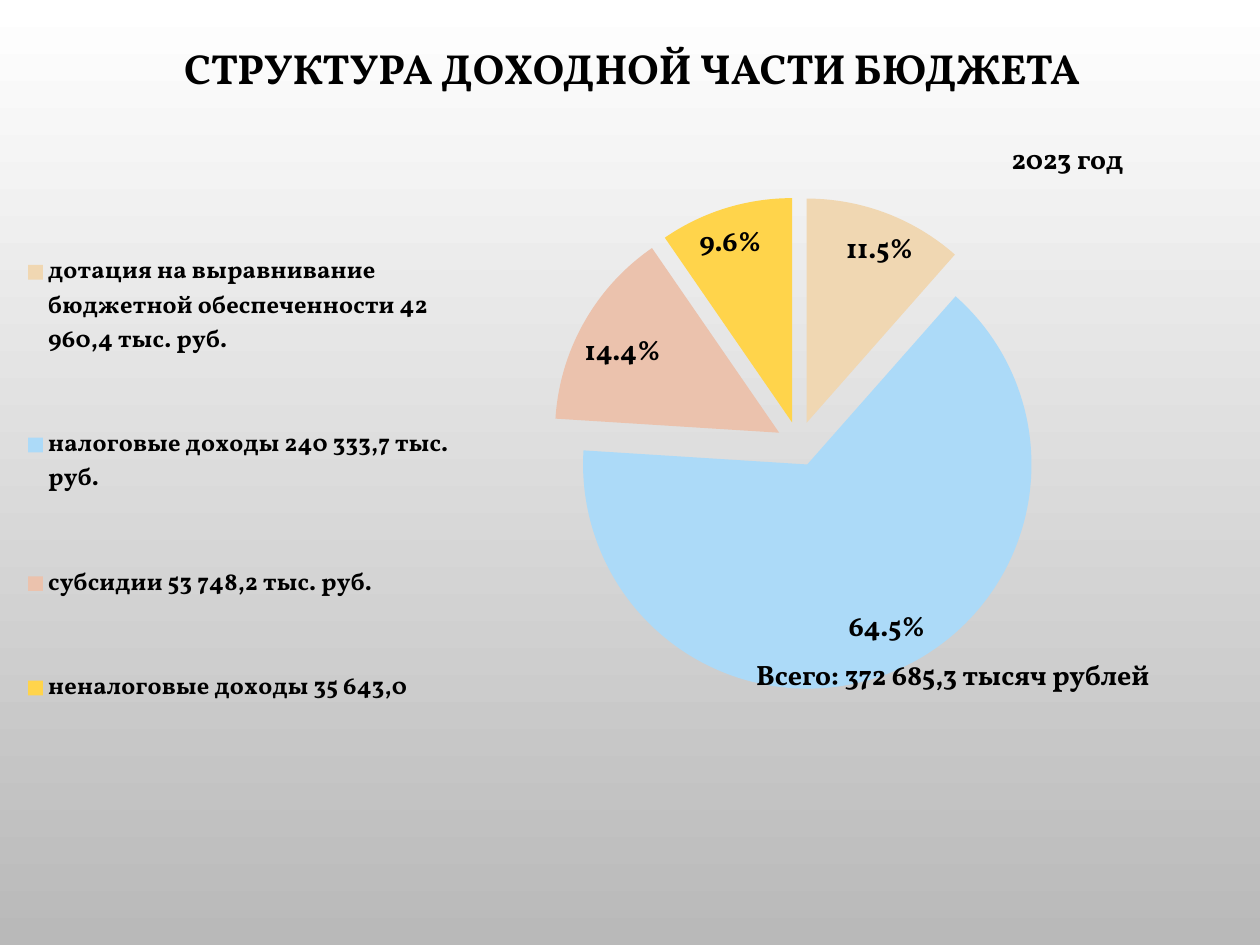
from lxml.etree import fromstring
from pptx import Presentation
from pptx.chart.data import CategoryChartData
from pptx.dml.color import RGBColor
from pptx.enum.chart import XL_CHART_TYPE, XL_LABEL_POSITION, XL_LEGEND_POSITION
from pptx.enum.text import MSO_ANCHOR, MSO_AUTO_SIZE, PP_ALIGN
from pptx.oxml.ns import nsdecls, qn
from pptx.util import Emu, Pt

SCALE = 914400 / 126
BLACK = RGBColor(0x00, 0x00, 0x00)
WHITE = RGBColor(0xFF, 0xFF, 0xFF)
GREY = RGBColor(0xB9, 0xB9, 0xB9)
SAND = RGBColor(0xF0, 0xD7, 0xB2)
SKY = RGBColor(0xAC, 0xDA, 0xF8)
ROSE = RGBColor(0xEB, 0xC2, 0xAD)
YELLOW = RGBColor(0xFF, 0xD4, 0x4B)

INCOME = [
    ("дотация на выравнивание бюджетной обеспеченности 42 960,4 тыс. руб.", 11.5, SAND),
    ("налоговые доходы 240 333,7 тыс. руб.", 64.5, SKY),
    ("субсидии 53 748,2 тыс. руб.", 14.4, ROSE),
    ("неналоговые доходы 35 643,0", 9.6, YELLOW),
]
CAPTIONS = [
    ("Всего: 372 685,3 тысяч рублей", (730, 651, 446, 47)),
    ("2023 год", (978, 135, 179, 47)),
]


def px(*lengths):
    return [Emu(round(length * SCALE)) for length in lengths]


def style_font(font, size):
    font.name = "Vollkorn"
    font.size = Pt(size)
    font.bold = True
    font.color.rgb = BLACK


presentation = Presentation()
presentation.slide_width, presentation.slide_height = px(1260, 945)
slide = presentation.slides.add_slide(presentation.slide_layouts[5])

background = slide.background.fill
background.gradient()
background.gradient_angle = 270
for stop, color in zip(background.gradient_stops, (WHITE, GREY)):
    stop.color.rgb = color

title = slide.shapes.title
title.left, title.top, title.width, title.height = px(84, 36, 1096, 69)
title.text_frame.text = "СТРУКТУРА ДОХОДНОЙ ЧАСТИ БЮДЖЕТА"
title.text_frame.vertical_anchor = MSO_ANCHOR.MIDDLE
paragraph = title.text_frame.paragraphs[0]
paragraph.alignment = PP_ALIGN.CENTER
paragraph.line_spacing = 0.9
style_font(paragraph.runs[0].font, 24)

chart_data = CategoryChartData(number_format="0.0")
chart_data.categories = [name for name, share, color in INCOME]
chart_data.add_series("Series 1", [share for name, share, color in INCOME])
chart = slide.shapes.add_chart(
    XL_CHART_TYPE.PIE, *px(25, 185, 1155, 609), chart_data
).chart
chart.has_title = False
chart.font.name = "Calibri"
chart.font.size = Pt(10)
chart.font.color.rgb = BLACK

chart.has_legend = True
chart.legend.position = XL_LEGEND_POSITION.LEFT
chart.legend.include_in_layout = False
style_font(chart.legend.font, 14)

plot = chart.plots[0]
plot.vary_by_categories = True
plot.has_data_labels = True
labels = plot.data_labels
labels.show_percentage = True
labels.show_value = False
labels.number_format = "0.0%"
labels.number_format_is_linked = False
labels.position = XL_LABEL_POSITION.BEST_FIT
style_font(labels.font, 16)

series = plot.series[0]
for index, (name, share, color) in enumerate(INCOME):
    fill = series.points[index].format.fill
    fill.solid()
    fill.fore_color.rgb = color
explosion = fromstring(f'<c:explosion {nsdecls("c")} val="10"/>')
series._element.find(qn("c:dPt")).addprevious(explosion)

# Fixed places for the pie and the legend, as fractions of the chart
plot_area = chart._chartSpace.chart.plotArea
for old_layout in plot_area.findall(qn("c:layout")):
    plot_area.remove(old_layout)
inner = '<c:layoutTarget val="inner"/>'
for element, position, target, box in (
    (plot_area, 0, inner, (0.37, 0.02, 0.6, 0.81)),
    (chart.legend._element, 1, "", (0, 0, 0.37, 0.97)),
):
    x, y, width, height = box
    for old_layout in element.findall(qn("c:layout")):
        element.remove(old_layout)
    element.insert(position, fromstring(
        f'<c:layout {nsdecls("c")}><c:manualLayout>{target}'
        '<c:xMode val="edge"/><c:yMode val="edge"/>'
        f'<c:x val="{x}"/><c:y val="{y}"/><c:w val="{width}"/><c:h val="{height}"/>'
        '</c:manualLayout></c:layout>'
    ))

for text, box in CAPTIONS:
    caption = slide.shapes.add_textbox(*px(*box))
    caption.text_frame.word_wrap = True
    caption.text_frame.auto_size = MSO_AUTO_SIZE.SHAPE_TO_FIT_TEXT
    caption.text_frame.text = text
    paragraph = caption.text_frame.paragraphs[0]
    paragraph.alignment = PP_ALIGN.CENTER
    style_font(paragraph.runs[0].font, 16)

presentation.save("out.pptx")
